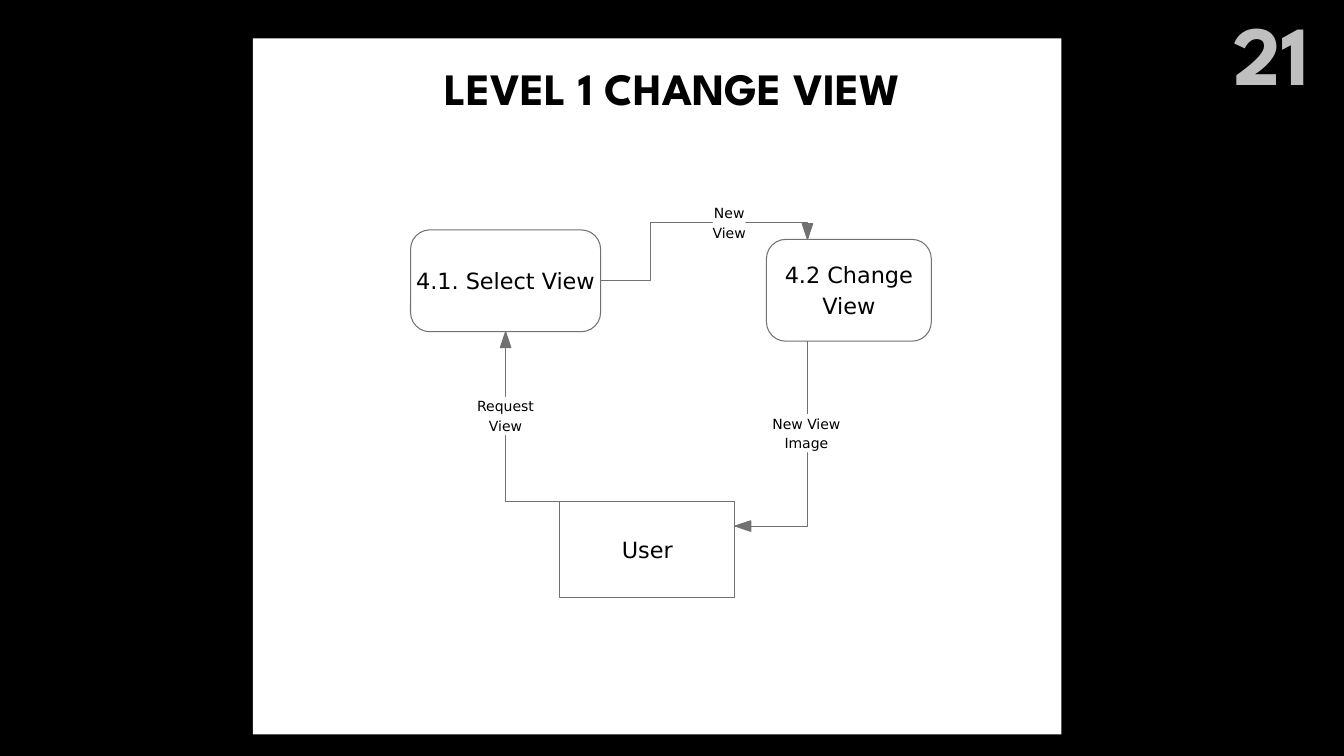
import math
from dataclasses import dataclass

import pptx
import pptx.dml.color
import pptx.enum.shapes
import pptx.enum.text
import pptx.util

SHAPE = pptx.enum.shapes.MSO_SHAPE
ALIGN = pptx.enum.text.PP_ALIGN
ANCHOR = pptx.enum.text.MSO_ANCHOR
SLIDE_WIDTH = pptx.util.Inches(13.333)
SLIDE_HEIGHT = pptx.util.Inches(7.5)
COLUMNS, ROWS = 128, 72
Point = tuple[float, float]


@dataclass(frozen=True)
class Theme:
    black: str = "000000"
    white: str = "FFFFFF"
    line: str = "717171"
    number: str = "BFBFBF"
    diagram_font: str = "DejaVu Sans"
    heading_font: str = "League Spartan"
    box_size: int = 16
    label_size: int = 10
    title_size: int = 32
    number_size: int = 60
    line_gap: float = 0.2
    corner: float = 0.19
    arrow_length: float = 1.5
    arrow_width: float = 1.0


@dataclass(frozen=True)
class Area:
    column: float
    row: float
    columns: float
    rows: float

    @property
    def center(self) -> float:
        return self.column + self.columns / 2

    @property
    def middle(self) -> float:
        return self.row + self.rows / 2

    @property
    def right(self) -> float:
        return self.column + self.columns

    @property
    def bottom(self) -> float:
        return self.row + self.rows


@dataclass(frozen=True)
class Box:
    area: Area
    lines: tuple[str, ...]
    size: int
    outlined: bool = True
    shape: SHAPE = SHAPE.RECTANGLE


@dataclass(frozen=True)
class Heading:
    area: Area
    text: str
    size: int
    color: str
    align: ALIGN
    anchor: ANCHOR


THEME = Theme()
PANEL = Area(24.1, 3.65, 77, 66.3)
USER = Area(53.3, 47.8, 16.7, 9.15)
SELECT = Area(39.1, 21.9, 18.1, 9.7)
CHANGE = Area(73, 22.8, 15.7, 9.7)
CHANGE_COLUMN = 76.9
TURN_COLUMN = 61.95
TOP_ROW = 21.2
RETURN_ROW = 50.1

BOXES = [
    Box(PANEL, (), THEME.box_size, outlined=False),
    Box(USER, ("User",), THEME.box_size),
    Box(SELECT, ("4.1. Select View",), THEME.box_size, shape=SHAPE.ROUNDED_RECTANGLE),
    Box(CHANGE, ("4.2 Change", "View"), THEME.box_size, shape=SHAPE.ROUNDED_RECTANGLE),
]
ROUTES: list[list[Point]] = [
    [(USER.column, USER.row), (SELECT.center, USER.row), (SELECT.center, SELECT.bottom)],
    [(SELECT.right, SELECT.middle), (TURN_COLUMN, SELECT.middle), (TURN_COLUMN, TOP_ROW),
     (CHANGE_COLUMN, TOP_ROW), (CHANGE_COLUMN, CHANGE.row)],
    [(CHANGE_COLUMN, CHANGE.bottom), (CHANGE_COLUMN, RETURN_ROW), (USER.right, RETURN_ROW)],
]
LABELS = [
    Box(Area(45.5, 37.8, 5.3, 3.65), ("Request", "View"), THEME.label_size, outlined=False),
    Box(Area(67.9, 19.4, 3.1, 3.65), ("New", "View"), THEME.label_size, outlined=False),
    Box(Area(73.6, 39.45, 6.4, 3.65), ("New View", "Image"), THEME.label_size, outlined=False),
]
HEADINGS = [
    Heading(Area(29.8, 3.65, 68.6, 9.3), "LEVEL 1 CHANGE VIEW", THEME.title_size,
            THEME.black, ALIGN.CENTER, ANCHOR.MIDDLE),
    Heading(Area(114.6, -0.3, 11, 10.7), "21", THEME.number_size,
            THEME.number, ALIGN.RIGHT, ANCHOR.TOP),
]


def across(columns: float) -> int:
    return round(SLIDE_WIDTH * columns / COLUMNS)


def down(rows: float) -> int:
    return round(SLIDE_HEIGHT * rows / ROWS)


def place(area: Area) -> tuple[int, int, int, int]:
    return across(area.column), down(area.row), across(area.columns), down(area.rows)


def rgb(color: str) -> pptx.dml.color.RGBColor:
    return pptx.dml.color.RGBColor.from_string(color)


def paint(shape, fill: str | None, line: str | None) -> None:
    shape.shadow.inherit = False
    if fill:
        shape.fill.solid()
        shape.fill.fore_color.rgb = rgb(fill)
    else:
        shape.fill.background()
    if line:
        shape.line.color.rgb = rgb(line)
        shape.line.width = pptx.util.Pt(0)
    else:
        shape.line.fill.background()


def add_span(para, text: str, font: str, size: int, color: str, bold: bool = False) -> None:
    span = para.add_run()
    span.text = text
    span.font.name = font
    span.font.size = pptx.util.Pt(size)
    span.font.color.rgb = rgb(color)
    span.font.bold = bold


def draw_box(page, box: Box) -> None:
    shape = page.shapes.add_shape(box.shape, *place(box.area))
    if box.shape == SHAPE.ROUNDED_RECTANGLE:
        shape.adjustments[0] = THEME.corner
    paint(shape, THEME.white, THEME.line if box.outlined else None)
    frame = shape.text_frame
    frame.word_wrap = False
    frame.vertical_anchor = ANCHOR.MIDDLE
    frame.margin_left = frame.margin_right = frame.margin_top = frame.margin_bottom = 0
    for index, line in enumerate(box.lines):
        para = frame.add_paragraph() if index else frame.paragraphs[0]
        para.alignment = ALIGN.CENTER
        para.space_before = pptx.util.Pt(box.size * THEME.line_gap if index else 0)
        add_span(para, line, THEME.diagram_font, box.size, THEME.black)


def draw_outline(page, points: list[Point], closed: bool, fill: str | None) -> None:
    corners = [(across(column), down(row)) for column, row in points]
    builder = page.shapes.build_freeform(*corners[0])
    builder.add_line_segments(corners[1:], close=closed)
    paint(builder.convert_to_shape(), fill, THEME.line)


def draw_route(page, route: list[Point]) -> None:
    (from_column, from_row), (column, row) = route[-2:]
    length = math.hypot(column - from_column, row - from_row)
    step_x, step_y = (column - from_column) / length, (row - from_row) / length
    base_x, base_y = column - step_x * THEME.arrow_length, row - step_y * THEME.arrow_length
    half = THEME.arrow_width / 2
    wings = [(base_x - step_y * side, base_y + step_x * side) for side in (half, -half)]
    draw_outline(page, route, False, None)
    draw_outline(page, [(column, row), *wings], True, THEME.line)


def draw_heading(page, heading: Heading) -> None:
    frame = page.shapes.add_textbox(*place(heading.area)).text_frame
    frame.word_wrap = True
    frame.vertical_anchor = heading.anchor
    para = frame.paragraphs[0]
    para.alignment = heading.align
    add_span(para, heading.text, THEME.heading_font, heading.size, heading.color, bold=True)


def main() -> None:
    deck = pptx.Presentation()
    deck.slide_width, deck.slide_height = SLIDE_WIDTH, SLIDE_HEIGHT
    page = deck.slides.add_slide(deck.slide_layouts[6])
    page.background.fill.solid()
    page.background.fill.fore_color.rgb = rgb(THEME.black)
    for box in BOXES:
        draw_box(page, box)
    for route in ROUTES:
        draw_route(page, route)
    for label in LABELS:
        draw_box(page, label)
    for heading in HEADINGS:
        draw_heading(page, heading)
    deck.save("out.pptx")


if __name__ == "__main__":
    main()
